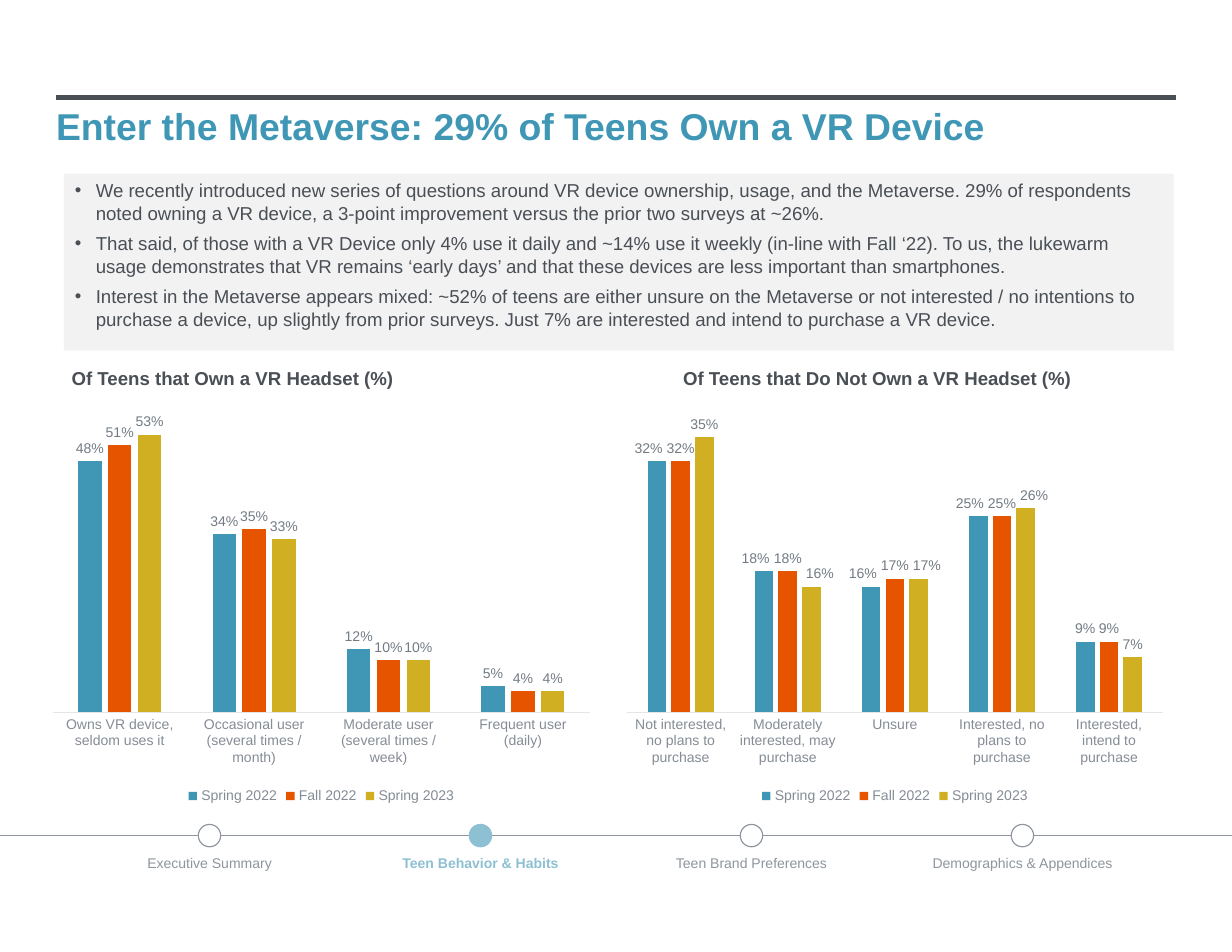
from dataclasses import dataclass, field

from lxml.etree import SubElement
from pptx import Presentation
from pptx.chart.data import CategoryChartData
from pptx.dml.color import RGBColor
from pptx.enum.chart import XL_CHART_TYPE, XL_LABEL_POSITION, XL_LEGEND_POSITION, XL_TICK_MARK
from pptx.enum.shapes import MSO_CONNECTOR, MSO_SHAPE
from pptx.enum.text import MSO_ANCHOR, PP_ALIGN
from pptx.oxml import parse_xml
from pptx.oxml.ns import nsdecls, qn
from pptx.util import Pt

FONT = "Arial"
DARK, TEAL, GREY, PALE_TEAL = "4A4F55", "3F97B5", "8E959D", "8DC0D2"
AXIS_TEXT, AXIS_LINE, LABEL_TEXT = "858C95", "E3E5E6", "737B84"
WHITE, PANEL = "FFFFFF", "F2F2F2"
PERIODS = ("Spring 2022", "Fall 2022", "Spring 2023")
PERIOD_COLOURS = (TEAL, "E65400", "D1AF22")


@dataclass
class Style:
    size: float
    colour: str
    bold: bool = False


@dataclass
class ColumnChart:
    title: str
    title_left: float
    title_width: float
    left: float
    width: float
    maximum: float
    rows: dict[str, tuple[float, ...]]
    # Per period: sideways label shift as a share of chart width, and the points it moves
    label_shifts: dict[str, tuple[float, tuple[int, ...]]] = field(default_factory=dict)


BULLETS = (
    "We recently introduced new series of questions around VR device ownership, usage, and the "
    "Metaverse. 29% of respondents noted owning a VR device, a 3-point improvement versus the "
    "prior two surveys at ~26%.",
    "That said, of those with a VR Device only 4% use it daily and ~14% use it weekly (in-line "
    "with Fall ‘22). To us, the lukewarm usage demonstrates that VR remains ‘early days’ and that "
    "these devices are less important than smartphones.",
    "Interest in the Metaverse appears mixed: ~52% of teens are either unsure on the Metaverse or "
    "not interested / no intentions to purchase a device, up slightly from prior surveys. Just 7% "
    "are interested and intend to purchase a VR device.",
)
CHARTS = (
    ColumnChart("Of Teens that Own a VR Headset (%)", 38.9, 240, 26.6, 360, 0.6, {
        "Owns VR device, seldom uses it": (0.48, 0.51, 0.53),
        "Occasional user (several times / month)": (0.34, 0.35, 0.33),
        "Moderate user (several times / week)": (0.12, 0.10, 0.10),
        "Frequent user (daily)": (0.05, 0.04, 0.04),
    }),
    ColumnChart("Of Teens that Do Not Own a VR Headset (%)", 432, 270, 396, 358.6, 0.4, {
        "Not interested, no plans to purchase": (0.32, 0.32, 0.35),
        "Moderately interested, may purchase": (0.18, 0.18, 0.16),
        "Unsure": (0.16, 0.17, 0.17),
        "Interested, no plans to purchase": (0.25, 0.25, 0.26),
        "Interested, intend to purchase": (0.09, 0.09, 0.07),
    }, {"Spring 2022": (-0.015, (0, 1, 2, 3)), "Spring 2023": (0.015, (1, 2, 3))}),
)
SECTIONS = ("Executive Summary", "Teen Behavior & Habits", "Teen Brand Preferences",
            "Demographics & Appendices")
CURRENT_SECTION = SECTIONS[1]


def colour(value: str) -> RGBColor:
    return RGBColor.from_string(value)


def style_font(font, style: Style) -> None:
    font.name, font.size, font.bold = FONT, Pt(style.size), style.bold
    font.color.rgb = colour(style.colour)


def add_span(para, text: str, style: Style) -> None:
    span = para.add_run()
    span.text = text
    style_font(span.font, style)


def add_text(page, text: str, left: float, top: float, width: float, height: float,
             style: Style, align=PP_ALIGN.LEFT):
    box = page.shapes.add_textbox(Pt(left), Pt(top), Pt(width), Pt(height))
    box.text_frame.word_wrap = True
    para = box.text_frame.paragraphs[0]
    para.alignment = align
    add_span(para, text, style)
    return box


def add_rule(page, left: float, right: float, y: float, line: str, weight: float) -> None:
    rule = page.shapes.add_connector(MSO_CONNECTOR.STRAIGHT, Pt(left), Pt(y), Pt(right), Pt(y))
    rule.line.color.rgb = colour(line)
    rule.line.width = Pt(weight)
    SubElement(rule._element.spPr, qn("a:effectLst"))


def add_shape(page, kind, left: float, top: float, width: float, height: float,
              fill: str, line: str | None = None):
    shape = page.shapes.add_shape(kind, Pt(left), Pt(top), Pt(width), Pt(height))
    shape.shadow.inherit = False
    shape.fill.solid()
    shape.fill.fore_color.rgb = colour(fill)
    if line:
        shape.line.color.rgb = colour(line)
        shape.line.width = Pt(0.75)
    else:
        shape.line.fill.background()
    return shape


def add_bullets(page) -> None:
    frame = add_shape(page, MSO_SHAPE.RECTANGLE, 41, 111.6, 713.5, 113.8, PANEL).text_frame
    frame.word_wrap = True
    frame.vertical_anchor = MSO_ANCHOR.TOP
    for index, text in enumerate(BULLETS):
        para = frame.paragraphs[0] if index == 0 else frame.add_paragraph()
        para.alignment = PP_ALIGN.LEFT
        para.space_after = Pt(5.3)
        add_span(para, text, Style(12, DARK))
        properties = para._p.get_or_add_pPr()
        properties.set("marL", str(Pt(13.5)))
        properties.set("indent", str(-Pt(13.5)))
        SubElement(properties, qn("a:buFont"), typeface=FONT)
        SubElement(properties, qn("a:buChar"), char="•")


def manual_layout(**settings):
    entries = "".join(f'<c:{name} val="{value}"/>' for name, value in settings.items())
    return parse_xml(f'<c:layout {nsdecls("c")}><c:manualLayout>{entries}'
                     '</c:manualLayout></c:layout>')


def fix_plot_area(chart) -> None:
    plot_area = chart._chartSpace.chart.plotArea
    for old in plot_area.findall(qn("c:layout")):
        plot_area.remove(old)
    plot_area.insert(0, manual_layout(layoutTarget="inner", xMode="edge", yMode="edge",
                                      x=0.02, y=0.02, w=0.96, h=0.75))


def shift_labels(series, shift: float, points: tuple[int, ...]) -> None:
    for point in points:
        label = series.points[point].data_label
        label.position = XL_LABEL_POSITION.OUTSIDE_END
        style_font(label.font, Style(9, LABEL_TEXT))
    for element in series._element.iter(qn("c:dLbl")):
        element.insert(1, manual_layout(x=shift, y=0))


def add_column_chart(page, item: ColumnChart) -> None:
    add_text(page, item.title, item.title_left, 232.6, item.title_width, 21.6,
             Style(12, DARK, True))
    data = CategoryChartData(number_format="0%")
    data.categories = list(item.rows)
    for period, values in zip(PERIODS, zip(*item.rows.values())):
        data.add_series(period, values)
    chart = page.shapes.add_chart(XL_CHART_TYPE.COLUMN_CLUSTERED, Pt(item.left), Pt(250.6),
                                  Pt(item.width), Pt(269.3), data).chart
    style_font(chart.font, Style(9, DARK))
    chart.has_title = False
    fix_plot_area(chart)

    # Axes
    values_axis = chart.value_axis
    values_axis.minimum_scale, values_axis.maximum_scale = 0, item.maximum
    values_axis.has_major_gridlines = False
    values_axis.visible = False
    category_axis = chart.category_axis
    category_axis.major_tick_mark = XL_TICK_MARK.NONE
    category_axis.format.line.color.rgb = colour(AXIS_LINE)
    category_axis.format.line.width = Pt(0.75)
    style_font(category_axis.tick_labels.font, Style(9, AXIS_TEXT))

    # Legend
    chart.has_legend = True
    chart.legend.position = XL_LEGEND_POSITION.BOTTOM
    chart.legend.include_in_layout = False
    style_font(chart.legend.font, Style(9, AXIS_TEXT))

    # Columns and labels
    plot = chart.plots[0]
    plot.gap_width, plot.overlap, plot.vary_by_categories = 219, -27, False
    for series, fill in zip(plot.series, PERIOD_COLOURS):
        series.format.fill.solid()
        series.format.fill.fore_color.rgb = colour(fill)
        labels = series.data_labels
        labels.show_value = True
        labels.position = XL_LABEL_POSITION.OUTSIDE_END
        labels.number_format, labels.number_format_is_linked = "0%", False
        style_font(labels.font, Style(9, LABEL_TEXT))
        if series.name in item.label_shifts:
            shift_labels(series, *item.label_shifts[series.name])


def add_section_tracker(page) -> None:
    first, step, dot, label = 134.7, 174.2, 14.4, 144
    add_rule(page, 0, 792, 537.2, GREY, 0.75)
    for index, section in enumerate(SECTIONS):
        current = section == CURRENT_SECTION
        centre = first + index * step
        ink = PALE_TEAL if current else GREY
        add_shape(page, MSO_SHAPE.OVAL, centre - dot / 2, 537.2 - dot / 2, dot, dot,
                  PALE_TEAL if current else WHITE, ink)
        add_text(page, section, centre - label / 2, 545.8, label, 18,
                 Style(9, ink, current), PP_ALIGN.CENTER)


def main() -> None:
    deck = Presentation()
    deck.slide_width, deck.slide_height = Pt(792), Pt(612)
    page = deck.slides.add_slide(deck.slide_layouts[6])
    # Heading
    add_rule(page, 36, 756, 62.6, DARK, 3.5)
    title = add_text(page, "Enter the Metaverse: 29% of Teens Own a VR Device",
                     36, 66.2, 718.6, 26, Style(24, TEAL, True)).text_frame
    title.margin_left = title.margin_right = title.margin_top = title.margin_bottom = 0
    # Findings, charts and section tracker
    add_bullets(page)
    for item in CHARTS:
        add_column_chart(page, item)
    add_section_tracker(page)
    deck.save("out.pptx")


if __name__ == "__main__":
    main()
